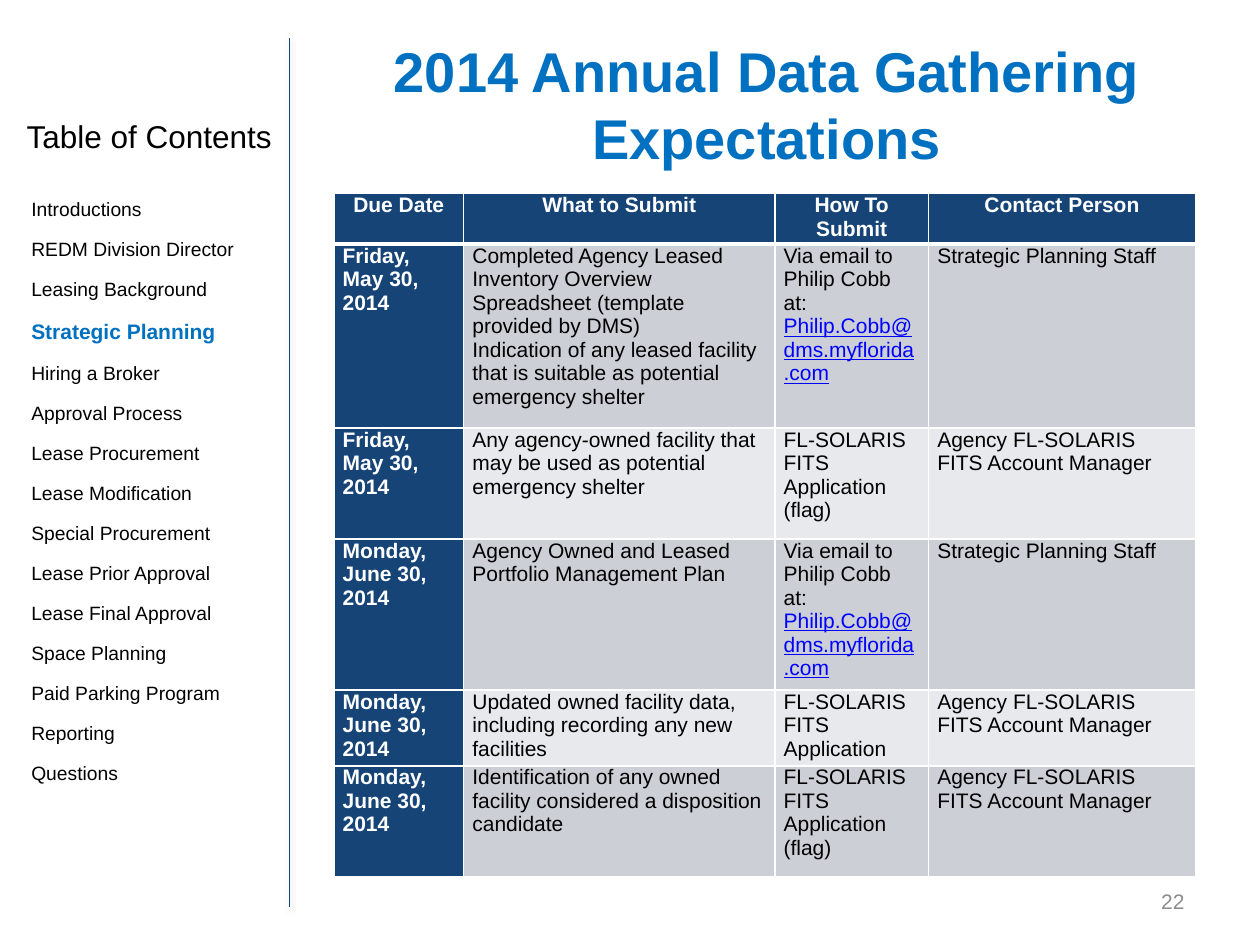
import pptx
import pptx.dml.color
import pptx.enum.shapes
import pptx.enum.text
import pptx.oxml
import pptx.oxml.ns
import pptx.util

RGB = pptx.dml.color.RGBColor
NAVY = RGB(0x16, 0x44, 0x77)
BLUE = RGB(0x00, 0x70, 0xC0)
LINK = RGB(0x00, 0x00, 0xFF)
DARK = RGB(0xCC, 0xCF, 0xD6)
PALE = RGB(0xE8, 0xE9, 0xEC)
GRAY = RGB(0x8C, 0x8C, 0x8C)
BLACK = RGB(0x00, 0x00, 0x00)
WHITE = RGB(0xFF, 0xFF, 0xFF)

ALIGN = pptx.enum.text.PP_ALIGN
ANCHOR = pptx.enum.text.MSO_ANCHOR
Pt = pptx.util.Pt
WIDE, HIGH = pptx.util.Inches(10), pptx.util.Inches(7.5)

TOPICS = [
    "Introductions", "REDM Division Director", "Leasing Background",
    "Strategic Planning", "Hiring a Broker", "Approval Process",
    "Lease Procurement", "Lease Modification", "Special Procurement",
    "Lease Prior Approval", "Lease Final Approval", "Space Planning",
    "Paid Parking Program", "Reporting", "Questions",
]
ACTIVE = "Strategic Planning"

HEADS = ["Due Date", "What to Submit", "How To Submit", "Contact Person"]
COLS = [1.03, 2.47, 1.22, 2.12]
ROWS = [0.31, 1.46, 0.88, 1.17, 0.59, 0.88]
MAY = "Friday,\nMay 30, 2014"
JUNE = "Monday,\nJune 30, 2014"
MAIL = "Philip.Cobb@dms.myflorida.com"
EMAIL = "Via email to Philip Cobb at: " + MAIL
APP = "FL-SOLARIS FITS Application"
FLAG = APP + " (flag)"
STAFF = "Strategic Planning Staff"
AGENT = "Agency FL-SOLARIS FITS Account Manager"
TASKS = [
    [MAY, "Completed Agency Leased Inventory Overview Spreadsheet "
          "(template provided by DMS)\nIndication of any leased facility "
          "that is suitable as potential emergency shelter", EMAIL, STAFF],
    [MAY, "Any agency-owned facility that may be used as potential "
          "emergency shelter", FLAG, AGENT],
    [JUNE, "Agency Owned and Leased Portfolio Management Plan", EMAIL, STAFF],
    [JUNE, "Updated owned facility data, including recording any new "
           "facilities", APP, AGENT],
    [JUNE, "Identification of any owned facility considered a disposition "
           "candidate", FLAG, AGENT],
]


def place(x, y, w, h):
    return int(x * WIDE), int(y * HIGH), int(w * WIDE), int(h * HIGH)


def style(para, size, color, bold=False, align=ALIGN.LEFT):
    para.alignment = align
    font = para.font
    font.name, font.size, font.bold = "Arial", Pt(size), bold
    font.color.rgb = color


def add_text(slide, box, lines, size, color, bold=False, align=ALIGN.LEFT):
    frame = slide.shapes.add_textbox(*place(*box)).text_frame
    frame.word_wrap = True
    frame.text = "\n".join(lines)
    for para in frame.paragraphs:
        style(para, size, color, bold, align)
    return frame


def add_rule(slide):
    x, top, _, drop = place(0.23, 0.04, 0, 0.92)
    kind = pptx.enum.shapes.MSO_CONNECTOR.STRAIGHT
    line = slide.shapes.add_connector(kind, x, top, x, top + drop)
    line.line.color.rgb = NAVY
    line.line.width = Pt(0.75)
    line._element.spPr.append(pptx.oxml.parse_xml(
        f'<a:effectLst {pptx.oxml.ns.nsdecls("a")}>'
        '<a:outerShdw blurRad="40000" dist="20000" dir="5400000" rotWithShape="0">'
        '<a:srgbClr val="000000"><a:alpha val="38000"/></a:srgbClr>'
        '</a:outerShdw></a:effectLst>'))


def add_menu(slide):
    frame = add_text(slide, (0.015, 0.19, 0.206, 0.727), TOPICS, 11, BLACK)
    for i, para in enumerate(frame.paragraphs):
        para.line_spacing = 1.5
        if i:
            para.space_before = Pt(3.1)
        if para.text == ACTIVE:
            style(para, 12, BLUE, True)


def set_edge(cell, side, width):
    cell._tc.get_or_add_tcPr().append(pptx.oxml.parse_xml(
        f'<a:ln{side} {pptx.oxml.ns.nsdecls("a")} w="{Pt(width)}">'
        f'<a:solidFill><a:srgbClr val="{WHITE}"/></a:solidFill></a:ln{side}>'))


def fill_cell(cell, text, row, col):
    cell.margin_left = cell.margin_right = pptx.util.Inches(0.07)
    cell.margin_top = cell.margin_bottom = 0
    for side in "LRTB":
        thick = (row, side) in ((0, "B"), (1, "T"))
        set_edge(cell, side, 3 if thick else 1)
    head = row == 0 or col == 0
    cell.fill.solid()
    cell.fill.fore_color.rgb = NAVY if head else DARK if row % 2 else PALE
    lead, mail, _ = text.partition(MAIL)
    cell.text = lead
    for para in cell.text_frame.paragraphs:
        style(para, 12, WHITE if head else BLACK, head,
              ALIGN.LEFT if row else ALIGN.CENTER)
    if mail:
        run = para.add_run()
        run.text = mail
        run.font.color.rgb = LINK
        run.font.underline = True


def add_plan(slide):
    box = place(0.265, 0.205, 0.684, 0.705)
    table = slide.shapes.add_table(len(ROWS), len(COLS), *box).table
    for col, w in zip(table.columns, COLS):
        col.width = pptx.util.Inches(w)
    for row, h in zip(table.rows, ROWS):
        row.height = pptx.util.Inches(h)
    for r, texts in enumerate([HEADS] + TASKS):
        for c, text in enumerate(texts):
            fill_cell(table.cell(r, c), text, r, c)


def main():
    deck = pptx.Presentation()
    deck.slide_width, deck.slide_height = WIDE, HIGH
    slide = deck.slides.add_slide(deck.slide_layouts[6])
    add_rule(slide)
    add_text(slide, (0.007, 0.117, 0.223, 0.053), ["Table of Contents"],
             18, BLACK, align=ALIGN.CENTER)
    add_plan(slide)
    add_menu(slide)
    add_text(slide, (0.267, 0.032, 0.683, 0.157),
             ["2014 Annual Data Gathering Expectations"],
             32, BLUE, True, ALIGN.CENTER)
    page = add_text(slide, (0.717, 0.927, 0.233, 0.053), ["22"],
                    12, GRAY, align=ALIGN.RIGHT)
    page.vertical_anchor = ANCHOR.MIDDLE
    deck.save("out.pptx")


if __name__ == "__main__":
    main()
